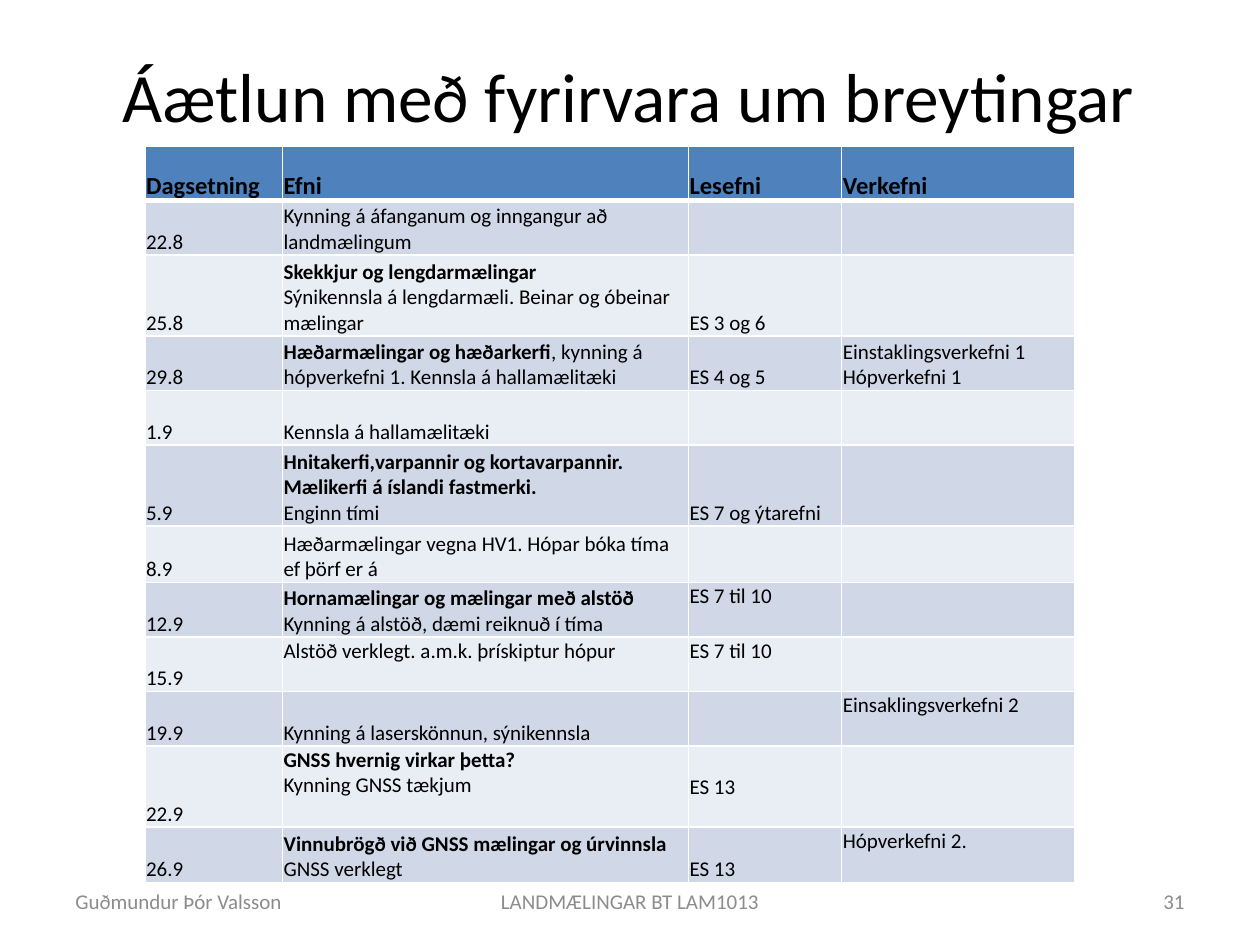
from dataclasses import dataclass

from lxml import etree
from pptx import Presentation
from pptx import util as u
from pptx.dml.color import RGBColor
from pptx.enum import text
from pptx.oxml.ns import qn

Pt = u.Pt
TOP, MIDDLE, BOTTOM = (text.MSO_ANCHOR.TOP, text.MSO_ANCHOR.MIDDLE,
                       text.MSO_ANCHOR.BOTTOM)
LEFT, CENTER, RIGHT = (text.PP_ALIGN.LEFT, text.PP_ALIGN.CENTER,
                       text.PP_ALIGN.RIGHT)


@dataclass(frozen=True)
class Theme:
    font: str = "Calibri"
    ink: str = "000000"
    muted: str = "8C8C8C"
    header: str = "4F81BD"
    bands: tuple = ("D0D8E8", "E9EDF4")
    border: str = "FFFFFF"
    title_size: float = 39.6
    header_size: float = 14
    body_size: float = 12


HEADINGS = ("Dagsetning", "Efni", "Lesefni", "Verkefni")
COLUMN_WIDTHS = (78.6, 232, 87.6, 133.2)
LOW, TALL = 31.1, 46.4
HEADER_HEIGHT = LOW

# Height, then the four cells; *stars* enclose bold text.
SCHEDULE = [
    (LOW, "22.8", "Kynning á áfanganum og inngangur að landmælingum", "", ""),
    (TALL, "25.8", "*Skekkjur og lengdarmælingar*\n"
     "Sýnikennsla á lengdarmæli. Beinar og óbeinar mælingar", "ES 3 og 6", ""),
    (LOW, "29.8", "*Hæðarmælingar og hæðarkerfi*, kynning á hópverkefni 1. "
     "Kennsla á hallamælitæki", "ES 4 og 5",
     "Einstaklingsverkefni 1\nHópverkefni 1"),
    (LOW, "1.9", "Kennsla á hallamælitæki", "", ""),
    (TALL, "5.9", "*Hnitakerfi,varpannir og kortavarpannir.*\n"
     "*Mælikerfi á íslandi fastmerki.*\nEnginn tími", "ES 7 og ýtarefni", ""),
    (32.3, "8.9", "Hæðarmælingar vegna HV1. Hópar bóka tíma ef þörf er á",
     "", ""),
    (LOW, "12.9", "*Hornamælingar og mælingar með alstöð*\n"
     "Kynning á alstöð, dæmi reiknuð í tíma", "ES 7 til 10", ""),
    (LOW, "15.9", "Alstöð verklegt. a.m.k. þrískiptur hópur",
     "ES 7 til 10", ""),
    (LOW, "19.9", "Kynning á laserskönnun, sýnikennsla", "",
     "Einsaklingsverkefni 2"),
    (TALL, "22.9", "*GNSS hvernig virkar þetta?*\nKynning GNSS tækjum",
     "ES 13", ""),
    (31.7, "26.9", "*Vinnubrögð við GNSS mælingar og úrvinnsla*\n"
     "GNSS verklegt", "ES 13", "Hópverkefni 2."),
]

# Cells (date, column) that do not sit at the bottom of their row.
ANCHORS = {
    ("12.9", 2): TOP, ("15.9", 1): TOP, ("15.9", 2): TOP, ("19.9", 3): TOP,
    ("22.9", 1): TOP, ("22.9", 2): MIDDLE, ("26.9", 3): TOP,
}


class Builder:
    def __init__(self, slide, theme):
        self.slide, self.theme = slide, theme

    def add_text(self, tf, content, size, color, align=LEFT):
        """Fill a text frame: one paragraph per line, *stars* for bold."""
        for i, line in enumerate(content.split("\n")):
            p = tf.paragraphs[0] if i == 0 else tf.add_paragraph()
            p.alignment = align
            p.font.size = Pt(size)
            for j, part in enumerate(line.split("*")):
                if not part:
                    continue
                r = p.add_run()
                r.text = part
                r.font.name = self.theme.font
                r.font.size = Pt(size)
                r.font.bold = j % 2 == 1
                r.font.color.rgb = RGBColor.from_string(color)

    def text_box(self, box, content, size, color, align):
        sp = self.slide.shapes.add_textbox(*map(Pt, box))
        tf = sp.text_frame
        tf.word_wrap = True
        tf.vertical_anchor = MIDDLE
        self.add_text(tf, content, size, color, align)

    def borders(self, cell, **widths):
        """Draw the cell's sides; widths in points, keyed L, R, T, B."""
        tc_pr = cell._tc.get_or_add_tcPr()
        for side, width in widths.items():
            ln = etree.SubElement(tc_pr, qn("a:ln" + side), w=str(Pt(width)))
            fill = etree.SubElement(ln, qn("a:solidFill"))
            etree.SubElement(fill, qn("a:srgbClr"), val=self.theme.border)

    def cell(self, cell, content, size, fill, anchor, top=1, bottom=1):
        cell.margin_left = cell.margin_right = cell.margin_top = Pt(0.7)
        cell.margin_bottom = 0
        cell.vertical_anchor = anchor
        self.borders(cell, L=1, R=1, T=top, B=bottom)
        cell.fill.solid()
        cell.fill.fore_color.rgb = RGBColor.from_string(fill)
        self.add_text(cell.text_frame, content, size, self.theme.ink)

    def schedule(self, left, top):
        th = self.theme
        heights = [HEADER_HEIGHT] + [row[0] for row in SCHEDULE]
        table = self.slide.shapes.add_table(
            len(heights), len(HEADINGS), Pt(left), Pt(top),
            Pt(sum(COLUMN_WIDTHS)), Pt(sum(heights))).table
        table.horz_banding = False
        for column, width in zip(table.columns, COLUMN_WIDTHS):
            column.width = Pt(width)
        for row, height in zip(table.rows, heights):
            row.height = Pt(height)
        for c, heading in enumerate(HEADINGS):
            self.cell(table.cell(0, c), f"*{heading}*", th.header_size,
                      th.header, BOTTOM, bottom=3)
        for r, (_, *contents) in enumerate(SCHEDULE, 1):
            for c, content in enumerate(contents):
                anchor = ANCHORS.get((contents[0], c), BOTTOM)
                self.cell(table.cell(r, c), content, th.body_size,
                          th.bands[(r - 1) % 2], anchor,
                          top=3 if r == 1 else 1)


def main():
    prs = Presentation()
    prs.slide_width, prs.slide_height = Pt(720), Pt(540)
    theme = Theme()
    s = Builder(prs.slides.add_slide(prs.slide_layouts[6]), theme)
    s.text_box((35.3, 9.4, 648, 90), "Áætlun með fyrirvara um breytingar",
               theme.title_size, theme.ink, CENTER)
    for left, width, content, align in (
            (36, 168, "Guðmundur Þór Valsson", LEFT),
            (246, 228, "LANDMÆLINGAR BT LAM1013", CENTER),
            (516, 168, "31", RIGHT)):
        s.text_box((left, 500.5, width, 28.8), content,
                   theme.body_size, theme.muted, align)
    s.schedule(82.8, 83.5)
    prs.save("out.pptx")


if __name__ == "__main__":
    main()
